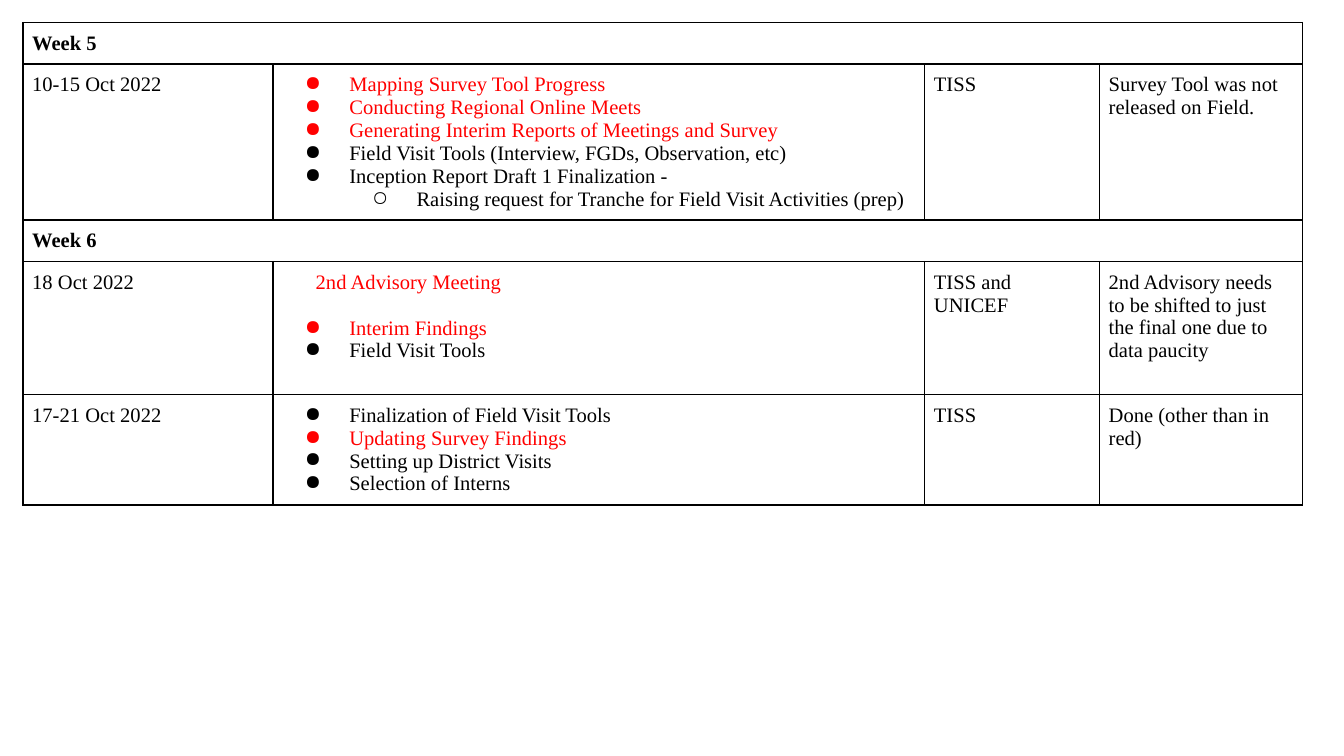
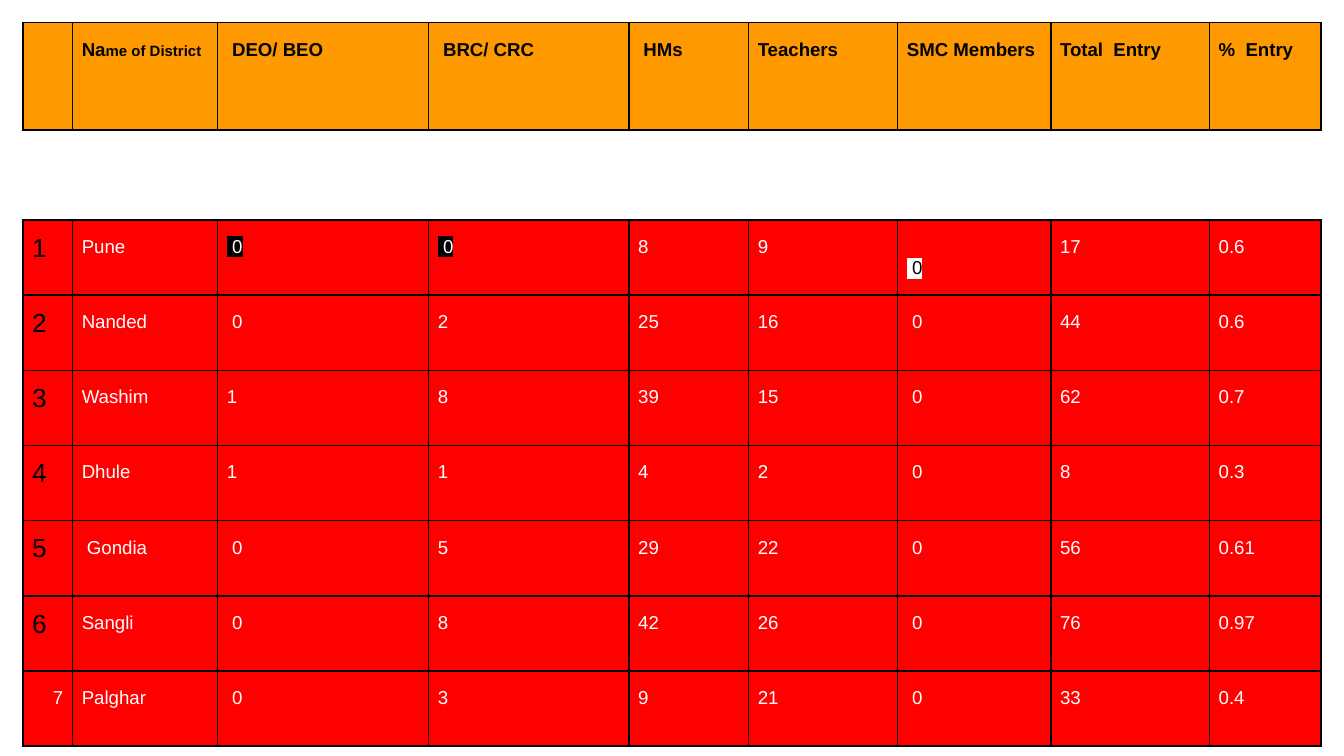
from dataclasses import dataclass
from lxml import etree
from pptx import Presentation
from pptx.dml.color import RGBColor
from pptx.enum.text import PP_ALIGN
from pptx.oxml.ns import qn
from pptx.util import Inches, Pt

RIGHT = PP_ALIGN.RIGHT
COLORS = {"black": "000000", "white": "FFFFFF", "red": "FF0000", "orange": "FF9900"}
LEFT_SHARE, TOP_SHARE = 1.7, 3


@dataclass
class Para:
    text: str
    color: str = "black"
    size: float = 11
    bold: bool = False
    bullet: str = ""
    level: int = 0
    hanging: float = 0
    before: float = 0
    spacing: float = 1.0
    highlight: str = ""
    align: object = None


class Deck:
    """Hold the deck, its table style and the current slide."""

    def __init__(self):
        self.deck = Presentation()
        self.deck.slide_width, self.deck.slide_height = Inches(10), Inches(5.625)

    def page(self, font, padding):
        """Start a blank slide with a font and a vertical cell padding."""
        self.slide = self.deck.slides.add_slide(self.deck.slide_layouts[6])
        self.font, self.padding = font, padding

    def across(self, share):
        return round(self.deck.slide_width * share / 100)

    def down(self, share):
        return round(self.deck.slide_height * share / 100)

    def table(self, columns, rows):
        """Add a plain table with sizes in percent of the slide."""
        frame = self.slide.shapes.add_table(
            len(rows), len(columns), self.across(LEFT_SHARE), self.down(TOP_SHARE),
            self.across(sum(columns)), self.down(sum(rows)))
        table = frame.table
        table.first_row = table.horz_banding = False
        for column, share in zip(table.columns, columns):
            column.width = self.across(share)
        for row, share in zip(table.rows, rows):
            row.height = self.down(share)
        return table

    def cell(self, cell, paras=(), fill="", sides="LRTB", drop=0):
        """Draw the borders, fill and text of one cell."""
        self.borders(cell, sides)
        if fill:
            cell.fill.solid()
            cell.fill.fore_color.rgb = RGBColor.from_string(COLORS[fill])
        else:
            cell.fill.background()
        cell.margin_left = cell.margin_right = Pt(5)
        cell.margin_top, cell.margin_bottom = Pt(self.padding + drop), Pt(self.padding)
        frame = cell.text_frame
        for index, item in enumerate(paras):
            para = frame.add_paragraph() if index else frame.paragraphs[0]
            self.para(para, item)

    def borders(self, cell, sides):
        """Give a cell black lines on the named sides only."""
        properties = cell._tc.get_or_add_tcPr()
        for side in "LRTB":
            line = etree.SubElement(properties, qn("a:ln" + side), w=str(Pt(1)))
            if side in sides:
                paint = etree.SubElement(line, qn("a:solidFill"))
                etree.SubElement(paint, qn("a:srgbClr"), val=COLORS["black"])
            else:
                etree.SubElement(line, qn("a:noFill"))

    def para(self, para, item):
        """Write one paragraph with its bullet, spacing and font."""
        para.text = item.text
        para.level = item.level
        properties = para._p.get_or_add_pPr()
        if item.hanging:
            properties.set("marL", str(Inches(0.5 * (item.level + 1))))
            properties.set("indent", str(-Inches(item.hanging)))
        if item.bullet:
            paint = etree.SubElement(properties, qn("a:buClr"))
            etree.SubElement(paint, qn("a:srgbClr"), val=COLORS[item.color])
            etree.SubElement(properties, qn("a:buChar"), char=item.bullet)
        para.line_spacing = item.spacing
        if item.before:
            para.space_before = Pt(item.before)
        if item.align:
            para.alignment = item.align
        for span in para.runs:
            self.style(span, item)

    def style(self, span, item):
        """Set the font of one run."""
        span.font.name, span.font.size, span.font.bold = self.font, Pt(item.size), item.bold
        span.font.color.rgb = RGBColor.from_string(COLORS[item.color])
        if item.highlight:
            mark = etree.Element(qn("a:highlight"))
            etree.SubElement(mark, qn("a:srgbClr"), val=COLORS[item.highlight])
            span._r.rPr.find(qn("a:solidFill")).addnext(mark)


def task(text, color="black", **options):
    return Para(text, color, bullet="●", hanging=0.33, **options)


def add_schedule(deck):
    """Build the table of weekly activities."""
    schedule = [
        "Week 5",
        ("10-15 Oct 2022",
         [task("Mapping Survey Tool Progress", "red"),
          task("Conducting Regional Online Meets", "red"),
          task("Generating Interim Reports of Meetings and Survey", "red"),
          task("Field Visit Tools (Interview, FGDs, Observation, etc)"),
          task("Inception Report Draft 1 Finalization -"),
          Para("Raising request for Tranche for Field Visit Activities (prep)",
               bullet="○", level=1, hanging=0.33)],
         "TISS", "Survey Tool was not released on Field."),
        "Week 6",
        ("18 Oct 2022",
         [Para("2nd Advisory Meeting", "red", hanging=0.25),
          task("Interim Findings", "red", before=12.3),
          task("Field Visit Tools")],
         "TISS and UNICEF",
         "2nd Advisory needs to be shifted to just the final one due to data paucity"),
        ("17-21 Oct 2022",
         [task("Finalization of Field Visit Tools"),
          task("Updating Survey Findings", "red"),
          task("Setting up District Visits"),
          task("Selection of Interns")],
         "TISS", "Done (other than in red)"),
    ]
    deck.page("Times New Roman", 5)
    table = deck.table([18.6, 48.5, 13, 15.1], [5.4, 20.6, 5.4, 17.6, 14.6])
    for row, entry in enumerate(schedule):
        if isinstance(entry, str):
            table.cell(row, 0).merge(table.cell(row, 3))
            contents = [[Para(entry, bold=True)], [], [], []]
        else:
            date, tasks, owner, remark = entry
            contents = [[Para(date)], tasks, [Para(owner)], [Para(remark)]]
        for column, paras in enumerate(contents):
            deck.cell(table.cell(row, column), paras)


def add_districts(deck):
    """Build the table of survey entries by district."""
    headings = ["", "Na", " DEO/ BEO", " BRC/ CRC", " HMs", "Teachers",
                "SMC Members", "Total  Entry", "%  Entry"]
    districts = [
        ["Pune", " 0", " 0", "8", "9", " 0", "17", "0.6"],
        ["Nanded", " 0", "2", "25", "16", " 0", "44", "0.6"],
        ["Washim", "1", "8", "39", "15", " 0", "62", "0.7"],
        ["Dhule", "1", "1", "4", "2", " 0", "8", "0.3"],
        [" Gondia", " 0", "5", "29", "22", " 0", "56", "0.61"],
        ["Sangli", " 0", "8", "42", "26", " 0", "76", "0.97"],
        ["Palghar", " 0", "3", "9", "21", " 0", "33", "0.4"],
    ]
    marked = {(1, 2): ("white", "black", 0), (1, 3): ("white", "black", 0),
              (1, 6): ("black", "white", 11.5)}
    deck.page("Arial", 7.2)
    table = deck.table([3.7, 10.8, 15.7, 14.9, 8.9, 11.1, 11.4, 11.8, 8.3],
                       [14.2, 11.9] + [9.95] * len(districts))
    for column, heading in enumerate(headings):
        paras = [Para(heading, size=10, bold=True, spacing=1.15)] if heading else []
        deck.cell(table.cell(0, column), paras, "orange")
        deck.cell(table.cell(1, column), sides="TB")
    span = table.cell(0, 1).text_frame.paragraphs[0].add_run()
    span.text = "me of District"
    deck.style(span, Para(span.text, size=8, bold=True))
    for number, values in enumerate(districts, 1):
        if number < len(districts):
            label = Para(str(number), size=14)
        else:
            label = Para(str(number), "white", 10, spacing=1.15, align=RIGHT)
        deck.cell(table.cell(number + 1, 0), [label], "red")
        for column, value in enumerate(values, 1):
            color, highlight, drop = marked.get((number, column), ("white", "", 0))
            para = Para(value, color, 10, spacing=1.15, highlight=highlight)
            deck.cell(table.cell(number + 1, column), [para], "red", drop=drop)


def main():
    deck = Deck()
    add_schedule(deck)
    add_districts(deck)
    deck.deck.save("out.pptx")


if __name__ == "__main__":
    main()
